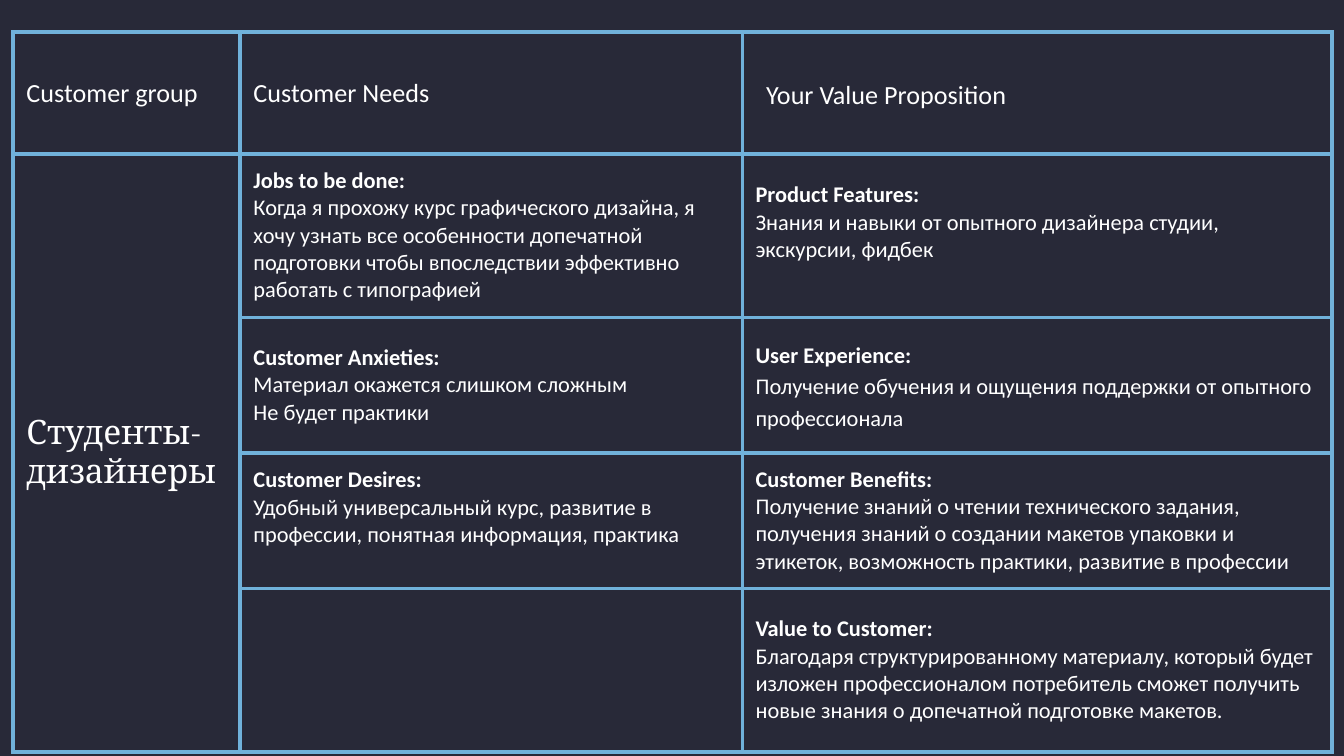
import dataclasses

import pptx
import pptx.dml.color
import pptx.enum.text
import pptx.oxml
import pptx.oxml.ns
import pptx.util
from pptx.util import Cm


@dataclasses.dataclass(frozen=True)
class Theme:
    background: str = "282938"
    rule: str = "70B1DA"
    text: str = "FFFFFF"
    sans: str = "Calibri"
    serif: str = "Cambria"
    heading: int = 14
    group: int = 18
    body: int = 12
    rule_width: float = 2.25


THEME = Theme()
INSET = 0.25
COLUMNS = [4.29, 9.49, 11.14]
ROWS = [2.3, 3.09, 2.56, 2.56, 3.09]

HEADINGS = ["Customer group", "Customer Needs", "Your Value Proposition"]
CUSTOMER_GROUP = ["Студенты-", "дизайнеры"]

# Each entry: bold title, then its paragraphs
NEEDS = [
    ["Jobs to be done:",
     "Когда я прохожу курс графического дизайна, я хочу узнать все особенности "
     "допечатной подготовки чтобы впоследствии эффективно работать с типографией"],
    ["Customer Anxieties:", "Материал окажется слишком сложным", "Не будет практики"],
    ["Customer Desires:",
     "Удобный универсальный курс, развитие в профессии, понятная информация, практика"],
]
PROPOSITION = [
    ["Product Features:", "Знания и навыки от опытного дизайнера студии,",
     "экскурсии, фидбек"],
    ["User Experience:",
     "Получение обучения и ощущения поддержки от опытного профессионала"],
    ["Customer Benefits:",
     "Получение знаний о чтении технического задания, получения знаний о создании "
     "макетов упаковки и этикеток, возможность практики, развитие в профессии"],
    ["Value to Customer:",
     "Благодаря структурированному материалу, который будет изложен профессионалом "
     "потребитель сможет получить новые знания о допечатной подготовке макетов."],
]


def rgb(value):
    return pptx.dml.color.RGBColor.from_string(value)


def style_cell(cell):
    """Borders, fill, insets and anchor shared by every cell."""
    properties = cell._tc.get_or_add_tcPr()
    width = int(pptx.util.Pt(THEME.rule_width))
    for position, side in enumerate(("lnL", "lnR", "lnT", "lnB")):
        properties.insert(position, pptx.oxml.parse_xml(
            f'<a:{side} {pptx.oxml.ns.nsdecls("a")} w="{width}"><a:solidFill>'
            f'<a:srgbClr val="{THEME.rule}"/></a:solidFill></a:{side}>'))
    cell.fill.solid()
    cell.fill.fore_color.rgb = rgb(THEME.background)
    cell.margin_left = cell.margin_right = Cm(INSET)
    cell.margin_top = cell.margin_bottom = Cm(INSET)
    cell.vertical_anchor = pptx.enum.text.MSO_ANCHOR.MIDDLE


def write(cell, lines, size, font=THEME.sans, titled=False):
    """One paragraph per line; a titled cell has a bold first line."""
    frame = cell.text_frame
    for index, line in enumerate(lines):
        paragraph = frame.paragraphs[0] if index == 0 else frame.add_paragraph()
        run = paragraph.add_run()
        run.text = line
        run.font.name = font
        run.font.size = pptx.util.Pt(size)
        run.font.bold = titled and index == 0
        run.font.color.rgb = rgb(THEME.text)
    return frame.paragraphs


def add_value_table(slide, left, top, columns, rows):
    table = slide.shapes.add_table(
        len(rows), len(columns), Cm(left), Cm(top),
        Cm(sum(columns)), Cm(sum(rows))).table
    table.first_row = table.horz_banding = False
    for column, width in zip(table.columns, columns):
        column.width = Cm(width)
    for row, height in zip(table.rows, rows):
        row.height = Cm(height)
    for cell in table.iter_cells():
        style_cell(cell)

    # Headings
    for index, heading in enumerate(HEADINGS):
        paragraphs = write(table.cell(0, index), [heading], THEME.heading)
    proposition_heading = paragraphs[0]
    proposition_heading.line_spacing = 1.15
    proposition_heading.space_before = pptx.util.Pt(12)
    proposition_heading.space_after = pptx.util.Pt(12)
    proposition_heading._p.get_or_add_pPr().set("marL", str(int(Cm(0.2))))

    # Customer group spans all body rows
    group = table.cell(1, 0)
    group.merge(table.cell(len(rows) - 1, 0))
    write(group, CUSTOMER_GROUP, THEME.group, THEME.serif)

    # Needs and proposition
    for column, entries in enumerate((NEEDS, PROPOSITION), start=1):
        for row, lines in enumerate(entries, start=1):
            write(table.cell(row, column), lines, THEME.body, titled=True)

    # User Experience is set looser
    for paragraph in table.cell(2, 2).text_frame.paragraphs:
        paragraph.line_spacing = 1.15
    # Product Features and Customer Desires sit half a line higher
    for row, column in ((1, 2), (3, 1)):
        table.cell(row, column).margin_bottom = Cm(INSET + 0.5)


def main():
    deck = pptx.Presentation()
    deck.slide_width, deck.slide_height = Cm(25.4), Cm(14.29)
    slide = deck.slides.add_slide(deck.slide_layouts[6])
    slide.background.fill.solid()
    slide.background.fill.fore_color.rgb = rgb(THEME.background)
    add_value_table(slide, 0.25, 0.61, COLUMNS, ROWS)
    deck.save("out.pptx")


if __name__ == "__main__":
    main()
